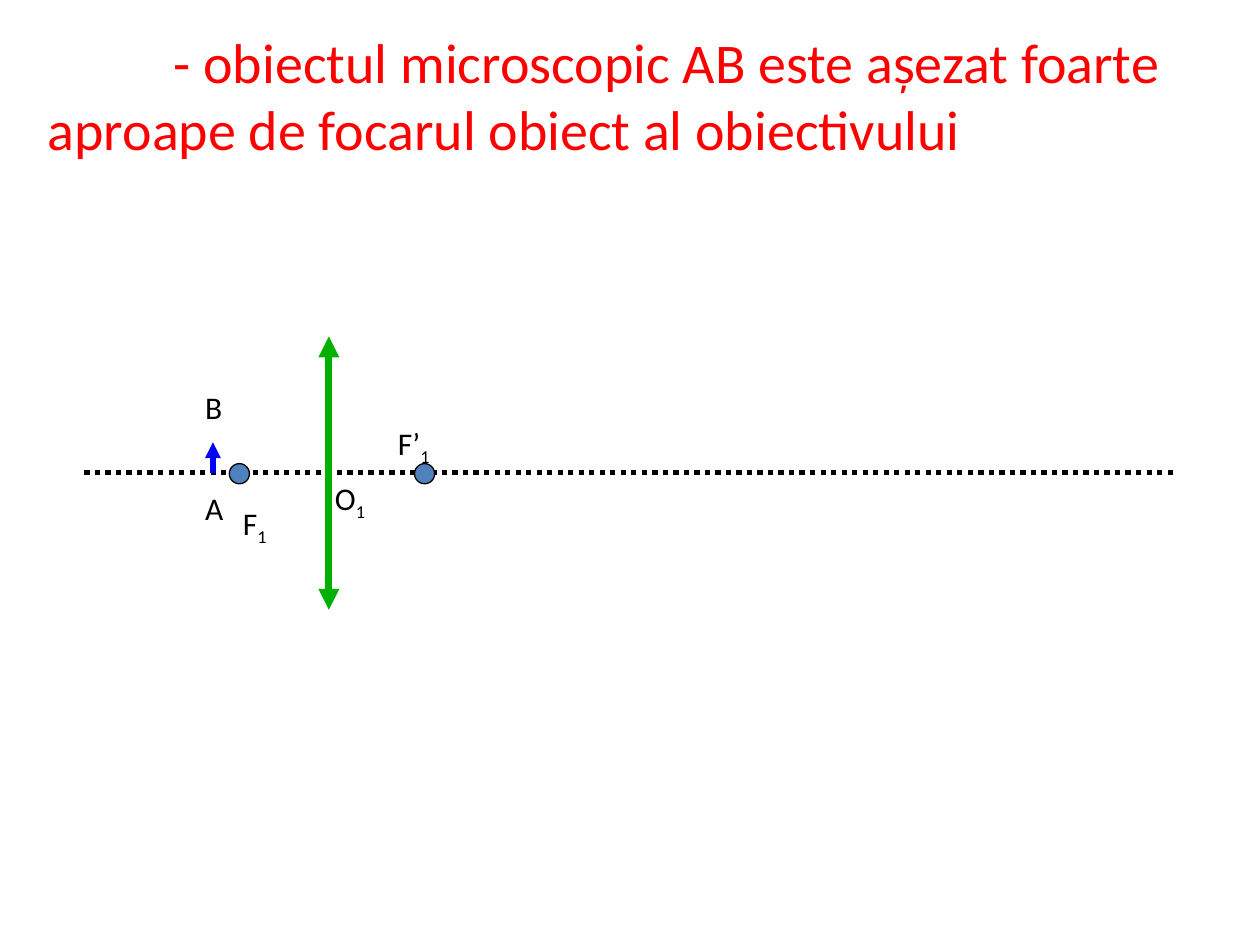
from dataclasses import dataclass

from lxml import etree
from pptx import Presentation
from pptx.dml.color import RGBColor
from pptx.enum.dml import MSO_LINE
from pptx.enum.shapes import MSO_CONNECTOR, MSO_SHAPE
from pptx.enum.text import MSO_AUTO_SIZE
from pptx.oxml.ns import qn
from pptx.util import Inches, Pt

STRAIGHT = MSO_CONNECTOR.STRAIGHT
OVAL = MSO_SHAPE.OVAL
DOTTED = MSO_LINE.ROUND_DOT
GROW = MSO_AUTO_SIZE.SHAPE_TO_FIT_TEXT


@dataclass(frozen=True)
class Theme:
    font: str = "Calibri"
    title_size: int = 32
    label_size: int = 18
    title: str = "FF0000"
    ink: str = "000000"
    specimen: str = "0000FF"
    lens: str = "00B000"
    focus: str = "4F81BD"


THEME = Theme()
AXIS_Y = 3.75
LENS_X = 2.61
OBJECT_X = 1.69
FOCUS_SIZE = 0.16
FOCUS_XS = (1.9, 3.37)

# Text, subscript, left, top, width
LABELS = (
    ("A", "", 1.53, 3.83, 0.39),
    ("B", "", 1.53, 3.03, 0.39),
    ("O", "1", 2.56, 3.75, 0.55),
    ("F", "1", 1.83, 3.95, 0.55),
    ("F’", "1", 3.06, 3.32, 0.55),
)


def add_line(page, start, end, color, width, dash=None, arrows=()):
    line = page.shapes.add_connector(STRAIGHT, *map(Inches, start + end))
    line.line.color.rgb = RGBColor.from_string(color)
    line.line.width = Pt(width)
    if dash is not None:
        line.line.dash_style = dash
    outline = line.line._get_or_add_ln()
    for arrow in arrows:
        etree.SubElement(outline, qn(f"a:{arrow}")).set("type", "triangle")
    etree.SubElement(line._element.spPr, qn("a:effectLst"))


def add_focus(page, center_x):
    left, top = center_x - FOCUS_SIZE / 2, AXIS_Y + 0.01 - FOCUS_SIZE / 2
    dot = page.shapes.add_shape(
        OVAL, Inches(left), Inches(top), Inches(FOCUS_SIZE), Inches(FOCUS_SIZE))
    dot.shadow.inherit = False
    dot.fill.solid()
    dot.fill.fore_color.rgb = RGBColor.from_string(THEME.focus)
    dot.line.color.rgb = RGBColor.from_string(THEME.ink)
    dot.line.width = Pt(0.75)


def add_span(para, text, size, color):
    span = para.add_run()
    span.text = text
    for name, value in {"name": THEME.font, "size": Pt(size)}.items():
        setattr(span.font, name, value)
    span.font.color.rgb = RGBColor.from_string(color)
    return span


def add_text(page, position, text, size, color, subscript="", indent=0):
    box = page.shapes.add_textbox(*map(Inches, position))
    for name, value in {"word_wrap": True, "auto_size": GROW}.items():
        setattr(box.text_frame, name, value)
    para = box.text_frame.paragraphs[0]
    add_span(para, text, size, color)
    if subscript:
        span = add_span(para, subscript, size, color)
        span._r.get_or_add_rPr().set("baseline", "-25000")
    if indent:
        para._p.get_or_add_pPr().set("indent", str(Inches(indent)))


def main():
    deck = Presentation()
    deck.slide_width, deck.slide_height = Inches(10), Inches(7.5)
    page = deck.slides.add_slide(deck.slide_layouts[6])

    # Optical axis and the object AB standing on it
    add_line(page, (0.67, AXIS_Y), (9.33, AXIS_Y), THEME.ink, 3, dash=DOTTED)
    add_line(page, (OBJECT_X, AXIS_Y), (OBJECT_X, 3.51), THEME.specimen, 3,
             arrows=("tailEnd",))

    # Objective lens with its two foci
    add_line(page, (LENS_X, 2.67), (LENS_X, 4.84), THEME.lens, 4,
             arrows=("headEnd", "tailEnd"))
    for center_x in FOCUS_XS:
        add_focus(page, center_x)

    # Point labels
    for text, subscript, left, top, width in LABELS:
        add_text(page, (left, top, width, 0.4), text, THEME.label_size,
                 THEME.ink, subscript=subscript)

    # Statement at the top
    add_text(page, (0.28, 0.17, 9.37, 1.18),
             "- obiectul microscopic AB este așezat foarte aproape de "
             "focarul obiect al obiectivului",
             THEME.title_size, THEME.title, indent=1)

    deck.save("out.pptx")


if __name__ == "__main__":
    main()
